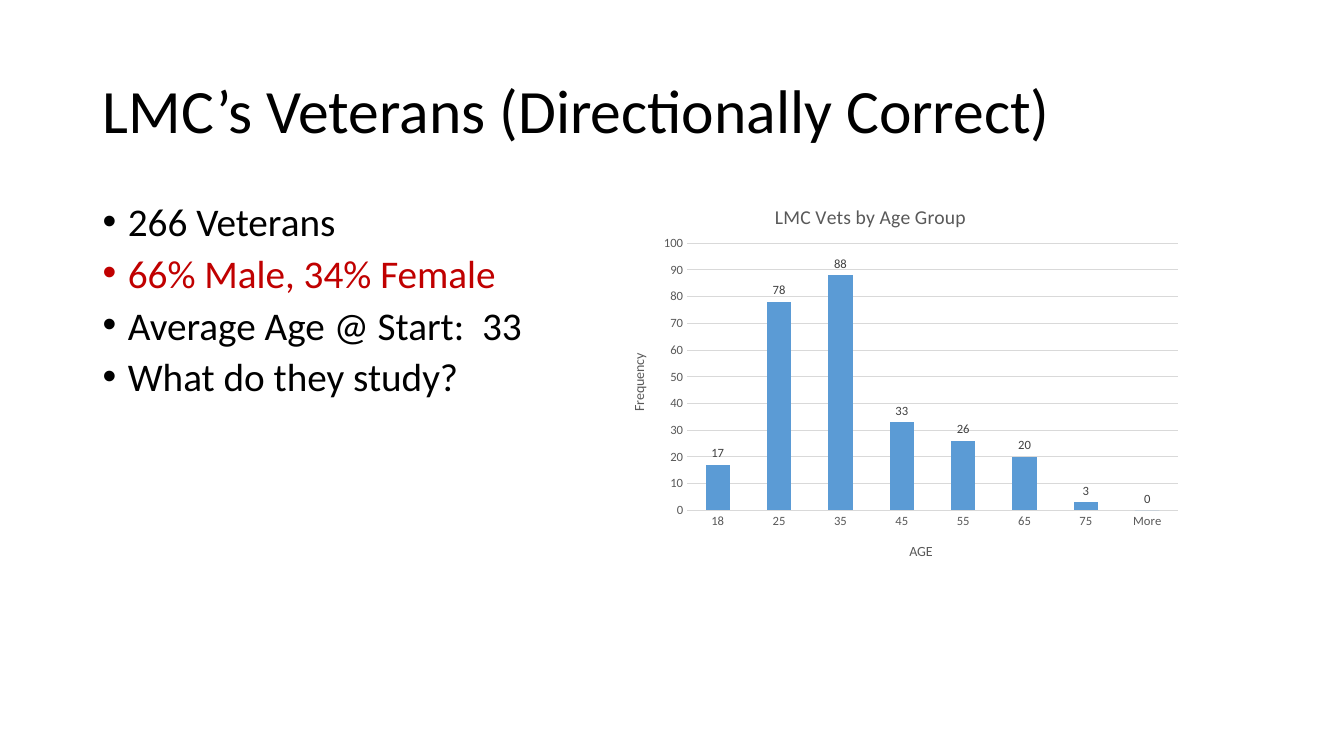
"""Build the slide on veterans by age group, with bullets and a column chart."""
import pptx
import pptx.chart.data
import pptx.dml.color
import pptx.enum.chart
import pptx.enum.text
import pptx.oxml
import pptx.oxml.ns
import pptx.util
from dataclasses import dataclass

HEADING = "LMC’s Veterans (Directionally Correct)"
FACTS = [
    ("266 Veterans", "ink"),
    ("66% Male, 34% Female", "accent"),
    ("Average Age @ Start:  33", "ink"),
    ("What do they study?", "ink"),
]
CHART_HEADING = "LMC Vets by Age Group"
AGE_AXIS, COUNT_AXIS = "AGE", "Frequency"
VETERANS_BY_AGE = {"18": 17, "25": 78, "35": 88, "45": 33,
                   "55": 26, "65": 20, "75": 3, "More": 0}

WIDTH, HEIGHT = 13.33, 7.5
MARGIN = 0.92
HEADING_BOX = (MARGIN, 0.4, WIDTH - 2 * MARGIN, 1.45)
FACTS_BOX = (MARGIN, 2, WIDTH - 2 * MARGIN, 2.18)
CHART_BOX = (5.55, 1.83, 6.17, 5.07)
PLOT_SHARES = {"x": 0.205, "y": 0.115, "w": 0.789, "h": 0.523}


@dataclass(frozen=True)
class Theme:
    font: str = "Calibri"
    ink: str = "000000"
    accent: str = "C00000"
    bar: str = "5B9BD5"
    muted: str = "595959"
    label: str = "404040"
    rule: str = "D9D9D9"
    heading: int = 44
    body: int = 28
    chart_heading: int = 14
    axis_heading: int = 10
    tick: int = 9


THEME = Theme()


def color(value):
    return pptx.dml.color.RGBColor.from_string(value)


def inches(box):
    return [pptx.util.Inches(length) for length in box]


def style(font, size, tint):
    font.name = THEME.font
    font.size = pptx.util.Pt(size)
    font.bold = False
    font.color.rgb = color(tint)


def add_run(paragraph, words, size, tint):
    run = paragraph.add_run()
    run.text = words
    style(run.font, size, tint)


def rule_line(line):
    line.color.rgb = color(THEME.rule)
    line.width = pptx.util.Pt(0.75)


def add_heading(slide):
    heading = slide.shapes.title
    heading.left, heading.top, heading.width, heading.height = inches(HEADING_BOX)
    heading.text_frame.vertical_anchor = pptx.enum.text.MSO_ANCHOR.MIDDLE
    paragraph = heading.text_frame.paragraphs[0]
    paragraph.alignment = pptx.enum.text.PP_ALIGN.LEFT
    paragraph.line_spacing = 0.9
    add_run(paragraph, HEADING, THEME.heading, THEME.ink)


def add_facts(slide):
    frame = slide.shapes.add_textbox(*inches(FACTS_BOX)).text_frame
    frame.word_wrap = True
    for index, (words, tint) in enumerate(FACTS):
        paragraph = frame.add_paragraph() if index else frame.paragraphs[0]
        paragraph.line_spacing = 0.8
        paragraph.space_before = pptx.util.Pt(10)
        indent = pptx.util.Inches(0.25)
        properties = paragraph._p.get_or_add_pPr()
        properties.set("marL", str(indent))
        properties.set("indent", str(-indent))
        for tag, key, value in (("buFont", "typeface", "Arial"), ("buChar", "char", "•")):
            bullet = properties.makeelement(pptx.oxml.ns.qn(f"a:{tag}"), {key: value})
            properties.append(bullet)
        add_run(paragraph, words, THEME.body, getattr(THEME, tint))


def fix_plot(chart):
    entries = "".join(f'<c:{side}Mode val="edge"/>' for side in "xy")
    entries += "".join(f'<c:{side} val="{share}"/>' for side, share in PLOT_SHARES.items())
    layout = pptx.oxml.parse_xml(
        f'<c:layout {pptx.oxml.ns.nsdecls("c")}><c:manualLayout>'
        f'<c:layoutTarget val="inner"/>{entries}</c:manualLayout></c:layout>')
    plot_area = chart._chartSpace.chart.plotArea
    for former in plot_area.findall(pptx.oxml.ns.qn("c:layout")):
        plot_area.remove(former)
    plot_area.insert(0, layout)


def format_axis(axis, words):
    add_run(axis.axis_title.text_frame.paragraphs[0], words, THEME.axis_heading, THEME.muted)
    style(axis.tick_labels.font, THEME.tick, THEME.muted)
    axis.major_tick_mark = axis.minor_tick_mark = pptx.enum.chart.XL_TICK_MARK.NONE


def add_age_chart(slide):
    veterans = pptx.chart.data.CategoryChartData()
    veterans.categories = list(VETERANS_BY_AGE)
    veterans.add_series("Series 1", list(VETERANS_BY_AGE.values()))
    chart = slide.shapes.add_chart(
        pptx.enum.chart.XL_CHART_TYPE.COLUMN_CLUSTERED, *inches(CHART_BOX), veterans).chart
    style(chart.font, THEME.axis_heading, THEME.ink)
    chart.has_legend = False
    add_run(chart.chart_title.text_frame.paragraphs[0], CHART_HEADING,
            THEME.chart_heading, THEME.muted)
    chart.chart_title.include_in_layout = False
    fix_plot(chart)

    ages, counts = chart.category_axis, chart.value_axis
    format_axis(ages, AGE_AXIS)
    format_axis(counts, COUNT_AXIS)
    rule_line(ages.format.line)
    counts.format.line.fill.background()
    counts.has_major_gridlines = True
    rule_line(counts.major_gridlines.format.line)
    counts.minimum_scale, counts.maximum_scale, counts.major_unit = 0, 100, 10

    plot = chart.plots[0]
    plot.gap_width = 150
    plot.vary_by_categories = False
    bars = plot.series[0]
    bars.format.fill.solid()
    bars.format.fill.fore_color.rgb = color(THEME.bar)
    bars.data_labels.show_value = True
    bars.data_labels.position = pptx.enum.chart.XL_LABEL_POSITION.OUTSIDE_END
    style(bars.data_labels.font, THEME.tick, THEME.label)


def main():
    deck = pptx.Presentation()
    deck.slide_width, deck.slide_height = inches((WIDTH, HEIGHT))
    slide = deck.slides.add_slide(deck.slide_layouts[5])
    add_heading(slide)
    add_facts(slide)
    add_age_chart(slide)
    deck.save("out.pptx")


if __name__ == "__main__":
    main()
